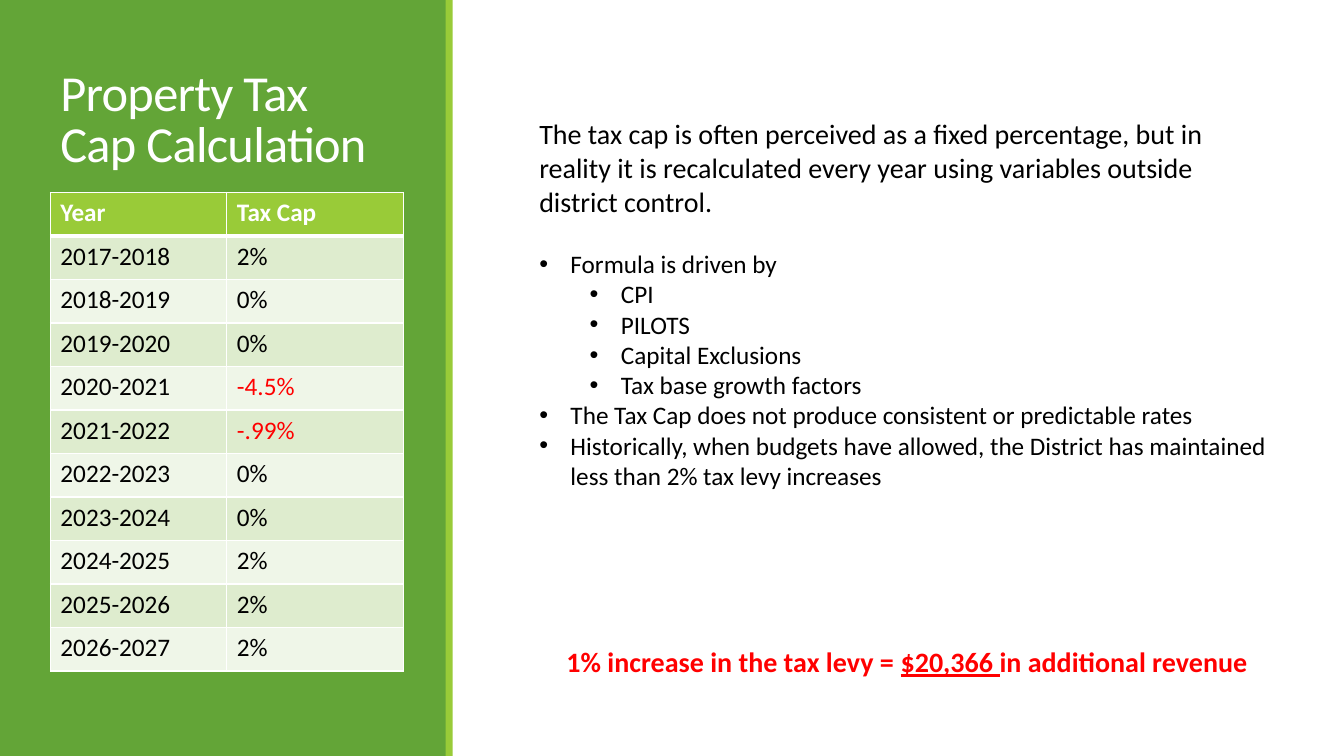
from dataclasses import dataclass

from lxml import etree
from pptx import Presentation, util as u
from pptx.dml import color as dml
from pptx.enum import shapes, text
from pptx.oxml import ns

FONT = "Calibri"
WHITE, BLACK, RED = "FFFFFF", "000000", "FF0000"
GREEN, LIME = "63A537", "99CB38"
ROW_FILLS = ("DEECCE", "EFF6E8")


@dataclass
class Band:
    left: float
    width: float
    fill: str


@dataclass
class TaxCap:
    year: str
    rate: str


@dataclass
class Point:
    words: str
    level: int = 0
    space_before: float = 0


BANDS = [Band(0, 4.43, GREEN), Band(4.42, 0.07, LIME)]

RATES = ["2%", "0%", "0%", "-4.5%", "-.99%", "0%", "0%", "2%", "2%", "2%"]
TAX_CAPS = [TaxCap(f"{year}-{year + 1}", rate) for year, rate in enumerate(RATES, 2017)]

POINTS = [
    Point("Formula is driven by", space_before=22),
    Point("CPI", 1),
    Point("PILOTS", 1),
    Point("Capital Exclusions", 1),
    Point("Tax base growth factors", 1),
    Point("The Tax Cap does not produce consistent or predictable rates"),
    Point("Historically, when budgets have allowed, the District has maintained "
          "less than 2% tax levy increases"),
]


def rgb(value: str) -> dml.RGBColor:
    return dml.RGBColor.from_string(value)


def write(paragraph, words: str, size: float = 18, color: str = BLACK,
          bold: bool = False, underline: bool = False, spacing: int = 0) -> None:
    run = paragraph.add_run()
    run.text = words
    font = run.font
    font.name, font.size = FONT, u.Pt(size)
    font.bold, font.underline = bold, underline
    font.color.rgb = rgb(color)
    if spacing:
        run._r.get_or_add_rPr().set("spc", str(spacing))


def add_text_frame(slide, left: float, top: float, width: float, height: float):
    box = slide.shapes.add_textbox(*map(u.Inches, (left, top, width, height)))
    box.text_frame.word_wrap = True
    return box.text_frame


def draw_band(slide, band: Band) -> None:
    shape = slide.shapes.add_shape(shapes.MSO_SHAPE.RECTANGLE, u.Inches(band.left), 0,
                                   u.Inches(band.width), u.Inches(7.5))
    shape.shadow.inherit = False
    shape.fill.solid()
    shape.fill.fore_color.rgb = rgb(band.fill)
    shape.line.fill.background()


def add_point(frame, point: Point) -> None:
    paragraph = frame.add_paragraph()
    paragraph.level = point.level
    paragraph.space_before = u.Pt(point.space_before)
    properties = paragraph._p.get_or_add_pPr()
    properties.set("marL", str(u.Inches(0.31 + 0.5 * point.level)))
    properties.set("indent", str(u.Inches(-0.31)))
    etree.SubElement(properties, ns.qn("a:buFont")).set("typeface", "Arial")
    etree.SubElement(properties, ns.qn("a:buChar")).set("char", "•")
    write(paragraph, point.words)


def add_border(cell, side: str, width: float) -> None:
    line = etree.SubElement(cell._tc.get_or_add_tcPr(), ns.qn(f"a:ln{side}"))
    line.set("w", str(u.Pt(width)))
    fill = etree.SubElement(line, ns.qn("a:solidFill"))
    etree.SubElement(fill, ns.qn("a:srgbClr")).set("val", WHITE)


def fill_cell(cell, row: int, words: str) -> None:
    header = row == 0
    borders = {"L": 1, "R": 1, "T": 3 if row == 1 else 1, "B": 3 if header else 1}
    for side, width in borders.items():
        add_border(cell, side, width)
    cell.fill.solid()
    cell.fill.fore_color.rgb = rgb(LIME if header else ROW_FILLS[(row - 1) % 2])
    color = WHITE if header else RED if words.startswith("-") else BLACK
    write(cell.text_frame.paragraphs[0], words, color=color, bold=header)


def draw_tax_caps(slide) -> None:
    rows = [TaxCap("Year", "Tax Cap"), *TAX_CAPS]
    table = slide.shapes.add_table(len(rows), 2, u.Inches(0.5), u.Inches(1.91),
                                   u.Inches(3.5), u.Inches(4.75)).table
    for row, entry in enumerate(rows):
        fill_cell(table.cell(row, 0), row, entry.year)
        fill_cell(table.cell(row, 1), row, entry.rate)


def draw_title(slide) -> None:
    title = add_text_frame(slide, 0.5, 0.65, 3.5, 1.2).paragraphs[0]
    title.line_spacing = 0.85
    write(title, "Property Tax Cap Calculation", size=36, color=WHITE, spacing=-50)


def draw_explanation(slide) -> None:
    frame = add_text_frame(slide, 5.25, 1.11, 7.49, 6.29)
    write(frame.paragraphs[0],
          "The tax cap is often perceived as a fixed percentage, but in reality it is "
          "recalculated every year using variables outside district control.", size=20)
    for point in POINTS:
        add_point(frame, point)

    # Revenue effect of a levy increase
    revenue = frame.add_paragraph()
    revenue.alignment = text.PP_ALIGN.CENTER
    revenue.space_before = u.Pt(110)
    write(revenue, "1% increase in the tax levy = ", size=20, color=RED, bold=True)
    write(revenue, "$20,366 ", size=20, color=RED, bold=True, underline=True)
    write(revenue, "in additional revenue", size=20, color=RED, bold=True)


def main() -> None:
    deck = Presentation()
    deck.slide_width, deck.slide_height = u.Inches(13.33), u.Inches(7.5)
    slide = deck.slides.add_slide(deck.slide_layouts[6])

    # Green side panel with its title and table
    for band in BANDS:
        draw_band(slide, band)
    draw_title(slide)
    draw_tax_caps(slide)

    # Text on the right
    draw_explanation(slide)
    deck.save("out.pptx")


if __name__ == "__main__":
    main()
